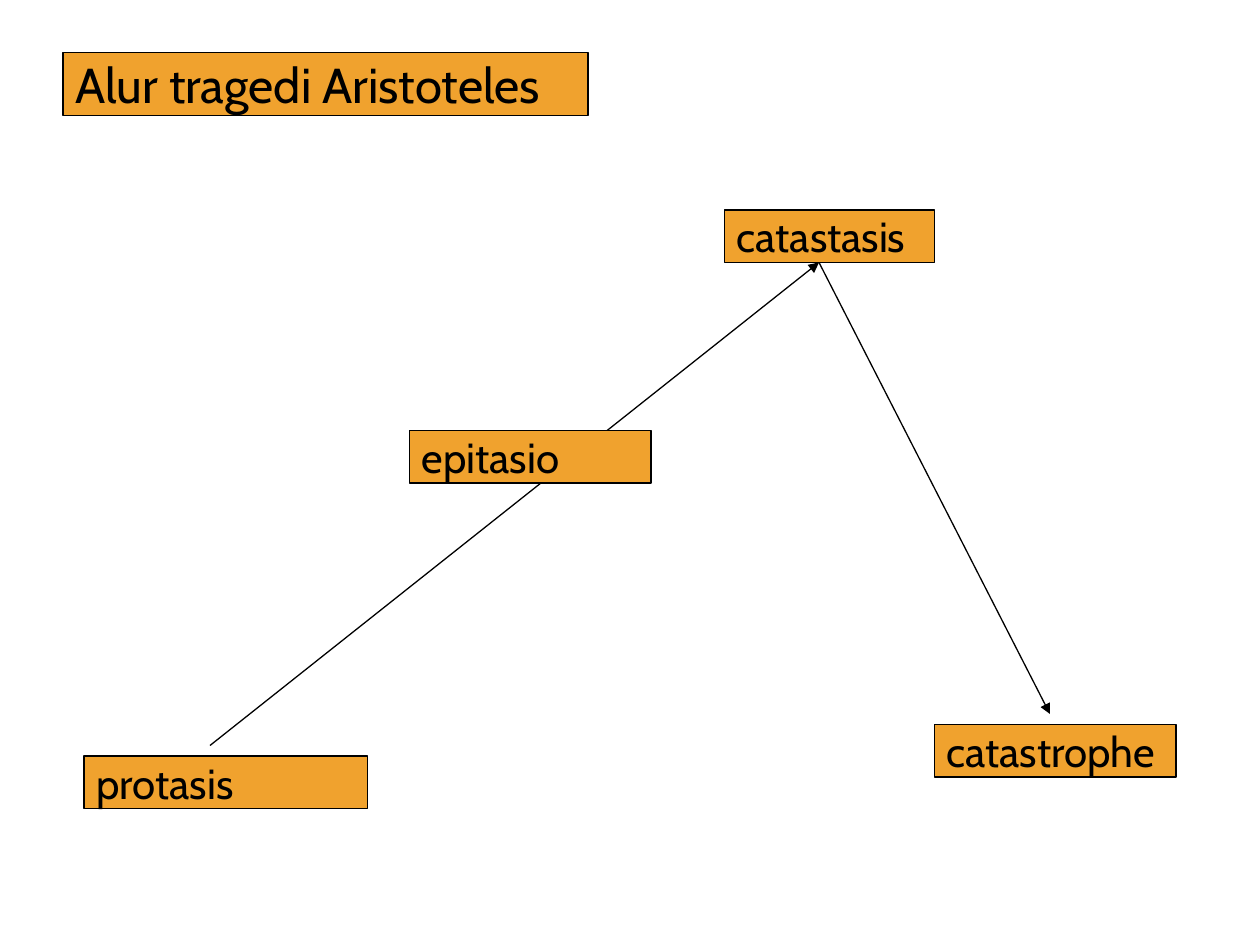
from typing import NamedTuple

from lxml.etree import SubElement
from pptx import Presentation
from pptx.dml.color import RGBColor
from pptx.enum.shapes import MSO_CONNECTOR, MSO_SHAPE
from pptx.enum.text import MSO_ANCHOR, PP_ALIGN
from pptx.oxml.ns import qn
from pptx.slide import Slide
from pptx.text.text import TextFrame
from pptx.util import Pt

COLORS = {"amber": "F0A22E", "black": "000000"}
FONT = "Cabin"
LINE_WIDTH = 0.75


class Label(NamedTuple):
    text: str
    left: float
    top: float
    width: float
    height: float = 30
    size: float = 24


class Point(NamedTuple):
    x: float
    y: float


# Plot curve: rising action up to the peak, then the fall
PLOT_POINTS = [Point(120, 426), Point(468, 150), Point(600, 408)]

LABELS = [
    Label("protasis", 48, 432, 162),
    Label("epitasio", 234, 246, 138),
    Label("catastasis", 414, 120, 120),
    Label("catastrophe", 534, 414, 138),
    Label("Alur tragedi Aristoteles", 36, 30, 300, height=36, size=28),
]


def color(name: str) -> RGBColor:
    return RGBColor.from_string(COLORS[name])


def write_text(frame: TextFrame, text: str, *, size: float,
               font: str = FONT, ink: str = "black") -> None:
    frame.word_wrap = False
    frame.vertical_anchor = MSO_ANCHOR.MIDDLE
    para = frame.paragraphs[0]
    para.alignment = PP_ALIGN.LEFT
    span = para.add_run()
    span.text = text
    span.font.name = font
    span.font.size = Pt(size)
    span.font.color.rgb = color(ink)


def draw_label(page: Slide, label: Label) -> None:
    box = page.shapes.add_shape(
        MSO_SHAPE.RECTANGLE, Pt(label.left), Pt(label.top),
        Pt(label.width), Pt(label.height))
    box.shadow.inherit = False
    box.fill.solid()
    box.fill.fore_color.rgb = color("amber")
    box.line.color.rgb = color("black")
    box.line.width = Pt(LINE_WIDTH)
    write_text(box.text_frame, label.text, size=label.size)


def draw_arrow(page: Slide, start: Point, end: Point) -> None:
    arrow = page.shapes.add_connector(
        MSO_CONNECTOR.STRAIGHT,
        Pt(start.x), Pt(start.y), Pt(end.x), Pt(end.y))
    arrow.line.color.rgb = color("black")
    arrow.line.width = Pt(LINE_WIDTH)
    # Arrowhead at the end, and no theme shadow
    properties = arrow.element.spPr
    SubElement(properties.find(qn("a:ln")), qn("a:tailEnd"), type="triangle")
    SubElement(properties, qn("a:effectLst"))


def main() -> None:
    deck = Presentation()
    deck.slide_width, deck.slide_height = Pt(720), Pt(540)
    page = deck.slides.add_slide(deck.slide_layouts[6])

    # Arrows lie behind the labels
    for start, end in zip(PLOT_POINTS, PLOT_POINTS[1:]):
        draw_arrow(page, start, end)
    for label in LABELS:
        draw_label(page, label)

    deck.save("out.pptx")


if __name__ == "__main__":
    main()
